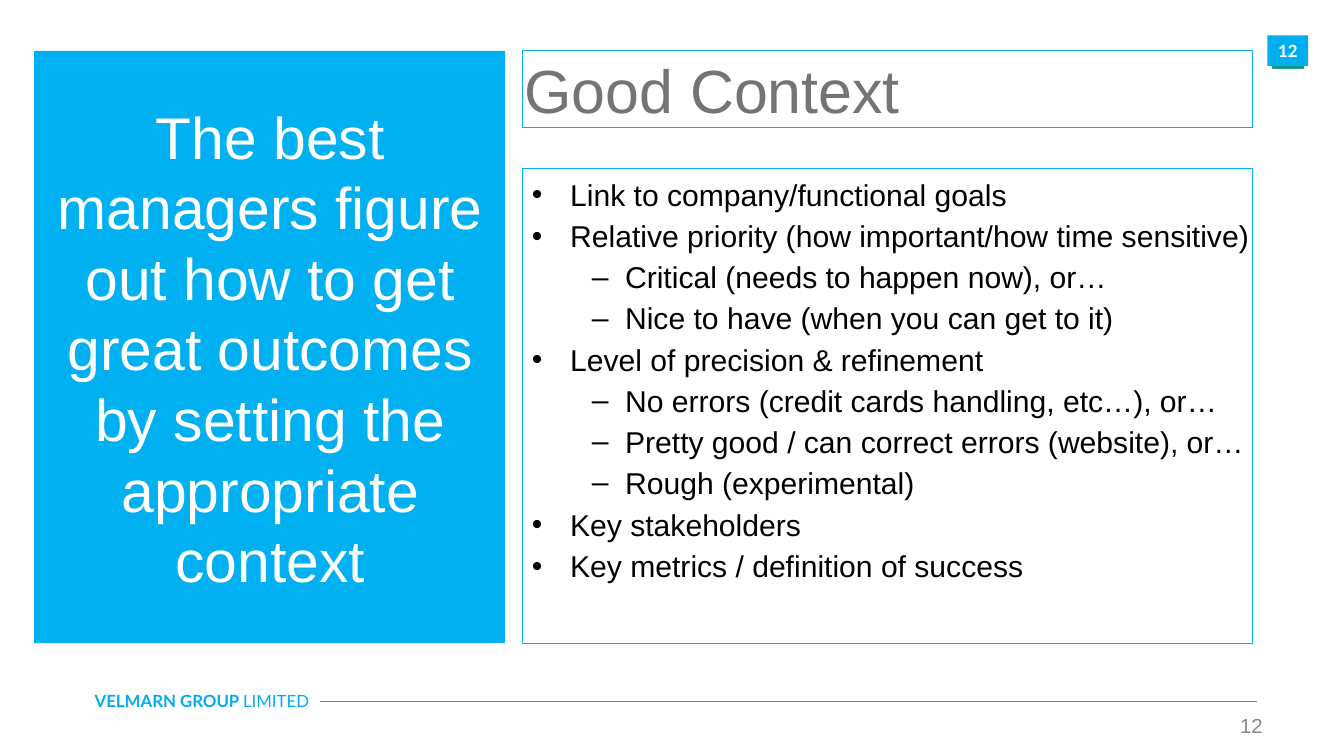
from lxml.etree import SubElement
from pptx import Presentation
from pptx.dml.color import RGBColor
from pptx.enum.shapes import MSO_CONNECTOR, MSO_SHAPE
from pptx.enum.text import MSO_ANCHOR, PP_ALIGN
from pptx.oxml.ns import qn
from pptx.util import Inches, Pt

THEME = {
    "font": "Arial", "brand_font": "Lato",
    "brand": "00ADEF", "panel": "00B0F0", "white": "FFFFFF", "black": "000000",
    "heading": "737572", "page": "888888", "rule": "7F7F7F",
    "tab_line": "1EA185", "tab_top": "4BAC93", "tab_bottom": "0D997B",
    "statement_size": 84, "heading_size": 87, "body_size": 43,
    "page_size": 29, "brand_size": 24,
}
PAGE = "12"
STATEMENT = "The best managers figure out how to get great outcomes by setting the appropriate context"
HEADING = "Good Context"
COMPANY = [("VELMARN GROUP ", True), ("LIMITED", False)]
POINTS = [
    ("Link to company/functional goals", []),
    ("Relative priority (how important/how time sensitive)", [
        "Critical (needs to happen now), or…",
        "Nice to have (when you can get to it)",
    ]),
    ("Level of precision & refinement", [
        "No errors (credit cards handling, etc…), or…",
        "Pretty good / can correct errors (website), or…",
        "Rough (experimental)",
    ]),
    ("Key stakeholders", []),
    ("Key metrics / definition of success", []),
]
LEVELS = [
    {"bullet": "•", "left": 0.94, "hanging": -0.76, "before": 8},
    {"bullet": "–", "left": 2.03, "hanging": -0.66, "before": 7},
]
TOP, COLUMN, COLUMN_WIDTH = 1.01, 10.37, 14.47


def color(name):
    return RGBColor.from_string(THEME[name])


def add_text(paragraph, text, *, size, ink, font="font", bold=False, align=PP_ALIGN.LEFT,
             left=0, hanging=0, before=0, spacing=None, bullet=None, level=0):
    paragraph.level = level
    paragraph.alignment = align
    properties = paragraph._p.get_or_add_pPr()
    properties.set("marL", str(Inches(left)))
    properties.set("indent", str(Inches(hanging)))
    if bullet:
        bullet_color = SubElement(properties, qn("a:buClr"))
        SubElement(bullet_color, qn("a:srgbClr"), val=THEME[ink])
        SubElement(properties, qn("a:buFont"), typeface=THEME[font])
        SubElement(properties, qn("a:buChar"), char=bullet)
    paragraph.space_before = Pt(before)
    if spacing:
        paragraph.line_spacing = spacing
    run = paragraph.add_run()
    run.text = text
    run.font.name = THEME[font]
    run.font.size = Pt(THEME[size])
    run.font.bold = bold
    run.font.color.rgb = color(ink)


def prepare_frame(frame, insets=(0, 0, 0, 0), anchor=MSO_ANCHOR.TOP, wrap=True):
    frame.margin_left, frame.margin_top, frame.margin_right, frame.margin_bottom = map(Inches, insets)
    frame.vertical_anchor = anchor
    frame.word_wrap = wrap
    return frame


def add_box(slide, place, fill=None, line=None, width=0.75):
    box = slide.shapes.add_shape(MSO_SHAPE.RECTANGLE, *map(Inches, place))
    box.shadow.inherit = False
    if fill:
        box.fill.solid()
        box.fill.fore_color.rgb = color(fill)
    else:
        box.fill.background()
    if line:
        box.line.color.rgb = color(line)
        box.line.width = Pt(width)
    else:
        box.line.fill.background()
    return box


def add_page_tab(slide):
    tab_edge = add_box(slide, (25.24, 0.73, 0.62, 0.62), line="tab_line")
    tab_edge.fill.gradient()
    tab_edge.fill.gradient_angle = 270
    for stop, shade in zip(tab_edge.fill.gradient_stops, ("tab_top", "tab_bottom")):
        stop.color.rgb = color(shade)
    tab = add_box(slide, (25.14, 0.7, 0.81, 0.61), fill="brand")
    label = prepare_frame(tab.text_frame, (0.2, 0.1, 0.2, 0.1), MSO_ANCHOR.MIDDLE, wrap=False)
    add_text(label.paragraphs[0], PAGE, size="brand_size", ink="white", font="brand_font",
             bold=True, align=PP_ALIGN.CENTER)


def add_footer(slide):
    company = slide.shapes.add_textbox(*map(Inches, (1.78, 13.65, 4.93, 0.5)))
    company_line = prepare_frame(company.text_frame, (0.1, 0.05, 0.1, 0.05), wrap=False).paragraphs[0]
    for words, bold in COMPANY:
        add_text(company_line, words, size="brand_size", ink="brand", font="brand_font", bold=bold)
    rule = slide.shapes.add_connector(MSO_CONNECTOR.STRAIGHT, *map(Inches, (6.34, 13.92, 24.94, 13.92)))
    rule.line.color.rgb = color("rule")
    rule.line.width = Pt(1)
    SubElement(rule._element.spPr, qn("a:effectLst"))
    page = slide.shapes.add_textbox(*map(Inches, (24.53, 14.14, 0.6, 0.39)))
    add_text(prepare_frame(page.text_frame, wrap=False).paragraphs[0], PAGE,
             size="page_size", ink="page", left=0.07, spacing=1.03)


def add_content(slide):
    statement = add_box(slide, (0.68, TOP, 9.33, 11.74), fill="panel", line="panel")
    statement_frame = prepare_frame(statement.text_frame, (0, 0.03, 0, 0), MSO_ANCHOR.MIDDLE)
    add_text(statement_frame.paragraphs[0], STATEMENT, size="statement_size", ink="white",
             align=PP_ALIGN.CENTER, left=0.03)
    heading = add_box(slide, (COLUMN, TOP, COLUMN_WIDTH, 1.52), line="panel", width=1.5)
    heading_frame = prepare_frame(heading.text_frame, (0, 0.04, 0, 0))
    add_text(heading_frame.paragraphs[0], HEADING, size="heading_size", ink="heading", left=0.03)
    points = add_box(slide, (COLUMN, 3.35, COLUMN_WIDTH, 9.41), line="panel", width=1.5)
    points_frame = prepare_frame(points.text_frame, (0, 0.14, 0, 0))
    entries = [(level, text) for point, details in POINTS
               for level, text in [(0, point)] + [(1, detail) for detail in details]]
    for index, (level, text) in enumerate(entries):
        paragraph = points_frame.add_paragraph() if index else points_frame.paragraphs[0]
        layout = LEVELS[level] if index else {**LEVELS[level], "before": 0}
        add_text(paragraph, text, size="body_size", ink="black", level=level, **layout)


def main():
    """Build the slide on good context and save it."""
    deck = Presentation()
    deck.slide_width, deck.slide_height = Inches(26.66), Inches(15)
    slide = deck.slides.add_slide(deck.slide_layouts[6])
    add_page_tab(slide)
    add_footer(slide)
    add_content(slide)
    deck.save("out.pptx")


if __name__ == "__main__":
    main()
